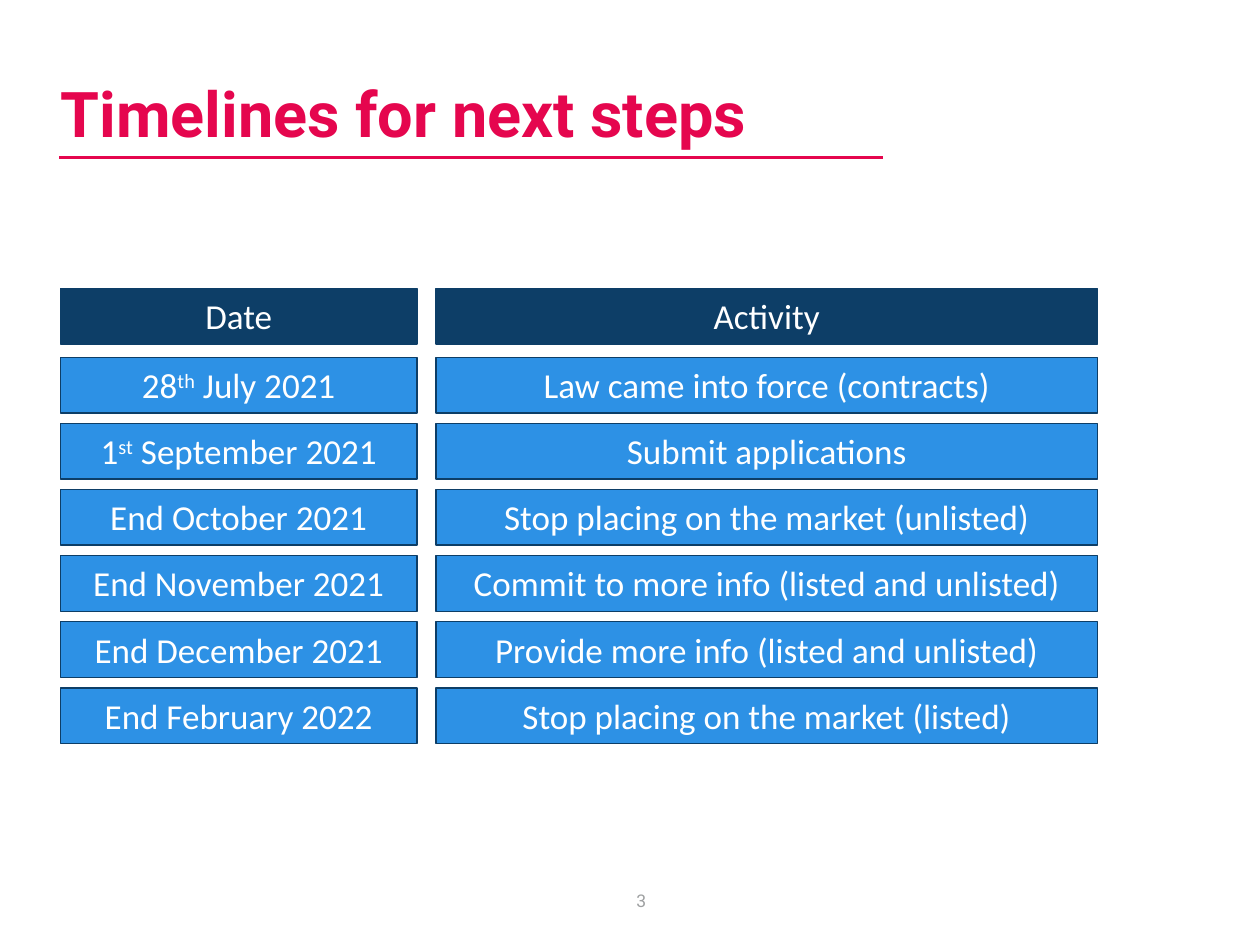
from dataclasses import dataclass
from lxml.etree import SubElement
from pptx import Presentation
from pptx.dml.color import RGBColor as Rgb
from pptx.enum.shapes import MSO_CONNECTOR as Conn, MSO_SHAPE as Shape
from pptx.enum.text import MSO_ANCHOR as Anchor, MSO_AUTO_SIZE as Fit, PP_ALIGN as Align
from pptx.oxml.ns import qn
from pptx.slide import Slide
from pptx.text.text import Font
from pptx.util import Pt


@dataclass(frozen=True)
class Theme:
    pink: Rgb = Rgb.from_string("E5064E")
    navy: Rgb = Rgb.from_string("0D3E67")
    blue: Rgb = Rgb.from_string("2D91E5")
    grey: Rgb = Rgb.from_string("9EA0A1")
    white: Rgb = Rgb.from_string("FFFFFF")
    head: str = "Roboto"
    body: str = "Calibri"
    title: float = 36
    cell: float = 20
    page: float = 10


@dataclass(frozen=True)
class Column:
    left: float
    width: float


@dataclass(frozen=True)
class Step:
    date: str  # text between carets is raised
    task: str


THEME = Theme()
COLS = (Column(34.56, 203.76), Column(249.12, 378))
HEAD = Step("Date", "Activity")
STEPS = (
    Step("28^th^ July 2021", "Law came into force (contracts)"),
    Step("1^st^ September 2021", "Submit applications"),
    Step("End October 2021", "Stop placing on the market (unlisted)"),
    Step("End November 2021", "Commit to more info (listed and unlisted)"),
    Step("End December 2021", "Provide more info (listed and unlisted)"),
    Step("End February 2022", "Stop placing on the market (listed)"),
)
HEAD_TOP, STEP_TOP, PITCH, HEIGHT = 164.88, 204.3, 37.76, 31.68


def style(font: Font, name: str, size: float, color: Rgb, bold: bool = False) -> None:
    font.name, font.size, font.bold = name, Pt(size), bold
    font.color.rgb = color


def add_title(slide: Slide, text: str) -> None:
    title = slide.shapes.title
    title.left, title.top, title.width, title.height = Pt(34.56), Pt(28.8), Pt(470.88), Pt(60.48)
    frame = title.text_frame
    frame.text = text
    frame.vertical_anchor = Anchor.BOTTOM
    frame.auto_size = Fit.NONE
    frame.margin_left = frame.margin_right = 0
    frame.margin_top = frame.margin_bottom = Pt(2.88)
    para = frame.paragraphs[0]
    para.alignment, para.line_spacing = Align.LEFT, 0.9
    style(para.runs[0].font, THEME.head, THEME.title, THEME.pink, True)


def add_rule(slide: Slide) -> None:
    rule = slide.shapes.add_connector(Conn.STRAIGHT, Pt(33.84), Pt(90), Pt(504.72), Pt(90))
    rule.line.color.rgb, rule.line.width = THEME.pink, Pt(2)
    SubElement(rule._element.spPr, qn("a:effectLst"))


def add_cell(slide: Slide, col: Column, top: float, text: str, fill: Rgb) -> None:
    box = slide.shapes.add_shape(
        Shape.RECTANGLE, Pt(col.left), Pt(top), Pt(col.width), Pt(HEIGHT))
    box.shadow.inherit = False
    box.fill.solid()
    box.fill.fore_color.rgb = fill
    box.line.color.rgb, box.line.width = THEME.navy, Pt(0.75)
    frame = box.text_frame
    frame.word_wrap, frame.auto_size = True, Fit.SHAPE_TO_FIT_TEXT
    frame.vertical_anchor = Anchor.TOP
    para = frame.paragraphs[0]
    para.alignment = Align.CENTER
    for num, part in enumerate(text.split("^")):
        run = para.add_run()
        run.text = part
        style(run.font, THEME.body, THEME.cell, THEME.white)
        if num % 2:
            run._r.get_or_add_rPr().set("baseline", "30000")


def add_row(slide: Slide, step: Step, top: float, fill: Rgb) -> None:
    for col, text in zip(COLS, (step.date, step.task)):
        add_cell(slide, col, top, text, fill)


def add_page(slide: Slide, text: str) -> None:
    box = slide.shapes.add_textbox(Pt(350.64), Pt(500.4), Pt(31.68), Pt(28.8))
    frame = box.text_frame
    frame.text = text
    frame.word_wrap, frame.vertical_anchor = True, Anchor.MIDDLE
    para = frame.paragraphs[0]
    para.alignment = Align.CENTER
    style(para.runs[0].font, THEME.head, THEME.page, THEME.grey)


def main() -> None:
    deck = Presentation()
    deck.slide_width, deck.slide_height = Pt(720), Pt(540)
    slide = deck.slides.add_slide(deck.slide_layouts.get_by_name("Title Only"))
    add_rule(slide)
    add_title(slide, "Timelines for next steps")
    add_page(slide, "3")
    add_row(slide, HEAD, HEAD_TOP, THEME.navy)
    for num, step in enumerate(STEPS):
        add_row(slide, step, STEP_TOP + num * PITCH, THEME.blue)
    deck.save("out.pptx")


if __name__ == "__main__":
    main()
